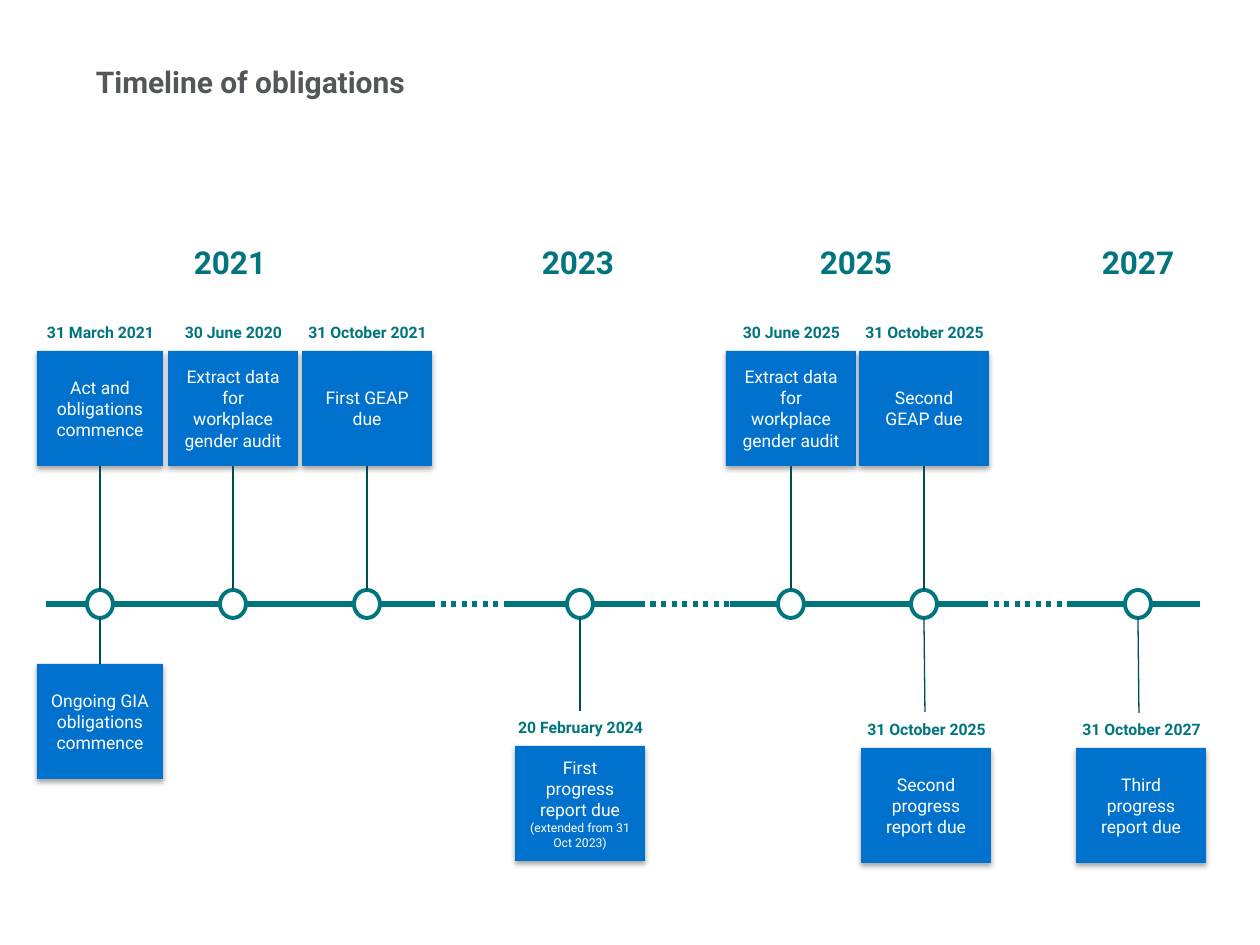
from dataclasses import dataclass

from lxml.etree import SubElement
from pptx import Presentation
from pptx.dml.color import RGBColor
from pptx.enum.dml import MSO_LINE as DASH
from pptx.enum.shapes import MSO_CONNECTOR as CONN, MSO_SHAPE as SHAPE
from pptx.enum.text import MSO_ANCHOR as ANCHOR, MSO_AUTO_SIZE as FIT, PP_ALIGN as ALIGN
from pptx.oxml.ns import qn
from pptx.util import Pt

PX = 914400 / 126  # EMU in one px


def px(n):
    return round(n * PX)


@dataclass(frozen=True)
class Theme:
    font: str = "Roboto"
    title: str = "53565A"
    teal: str = "00757D"
    stem: str = "004E53"
    box: str = "0072CE"
    white: str = "FFFFFF"
    title_pt: float = 17.1
    year_pt: int = 18
    box_pt: int = 10
    date_pt: int = 9
    note_pt: int = 7


class Timeline:
    AXIS_Y = 604
    BOX_H = 115
    DOT_W, DOT_H = 26, 28
    DOT_TOP, DOT_BOTTOM = AXIS_Y - DOT_H // 2, AXIS_Y + DOT_H // 2

    def __init__(self, slide, theme):
        self.slide, self.theme = slide, theme

    def style(self, p, size, color, bold=False, align=ALIGN.CENTER):
        p.alignment = align
        p.font.name, p.font.size, p.font.bold = self.theme.font, Pt(size), bold
        p.font.color.rgb = RGBColor.from_string(color)

    def text(self, x, y, w, h, text, size, color, align=ALIGN.CENTER):
        s = self.slide.shapes.add_textbox(px(x), px(y), px(w), px(h))
        tf = s.text_frame
        tf.word_wrap = True
        tf.text = text
        self.style(tf.paragraphs[0], size, color, True, align)
        return tf

    def title(self, text):
        tf = self.text(96, 0, 848, 100, text, self.theme.title_pt, self.theme.title, ALIGN.LEFT)
        tf.vertical_anchor = ANCHOR.BOTTOM
        tf.margin_left = tf.margin_right = tf.margin_top = tf.margin_bottom = 0

    def year(self, cx, text):
        tf = self.text(cx - 75, 237, 150, 50, text, self.theme.year_pt, self.theme.teal)
        tf.auto_size = FIT.SHAPE_TO_FIT_TEXT

    def line(self, x1, y1, x2, y2, color, width, dash=None):
        c = self.slide.shapes.add_connector(CONN.STRAIGHT, px(x1), px(y1), px(x2), px(y2))
        c.line.color.rgb = RGBColor.from_string(color)
        c.line.width = Pt(width)
        if dash:
            c.line.dash_style = dash
        SubElement(c._element.spPr, qn("a:effectLst"))
        return c

    def axis(self, x1, x2, dash=None):
        self.line(x1, self.AXIS_Y, x2, self.AXIS_Y, self.theme.teal, 3, dash)

    def stem(self, x, dot_y, end_x, end_y, box=None, side=None):
        """Line from a dot to an end point, joined to a box if there is one."""
        c = self.line(x, dot_y, end_x, end_y, self.theme.stem, 0.75)
        if box is not None:
            c.end_connect(box, side)

    def shape(self, kind, x, y, w, h, fill):
        s = self.slide.shapes.add_shape(kind, px(x), px(y), px(w), px(h))
        s.shadow.inherit = False
        s.fill.solid()
        s.fill.fore_color.rgb = RGBColor.from_string(fill)
        return s

    def dot(self, cx):
        s = self.shape(SHAPE.OVAL, cx - self.DOT_W // 2, self.DOT_TOP,
                       self.DOT_W, self.DOT_H, self.theme.white)
        s.line.color.rgb = RGBColor.from_string(self.theme.teal)
        s.line.width = Pt(2.25)

    def drop_shadow(self, s):
        effects = s._element.spPr.find(qn("a:effectLst"))
        shadow = SubElement(effects, qn("a:outerShdw"), blurRad=str(Pt(3.1)),
                            dist=str(Pt(1.8)), dir="5400000", rotWithShape="0")
        color = SubElement(shadow, qn("a:srgbClr"), val="000000")
        SubElement(color, qn("a:alpha"), val="35000")

    def box(self, x, y, w, text, date=None, note=None):
        t = self.theme
        s = self.shape(SHAPE.RECTANGLE, x, y, w, self.BOX_H, t.box)
        s.line.fill.background()
        self.drop_shadow(s)
        tf = s.text_frame
        tf.vertical_anchor = ANCHOR.MIDDLE
        tf.text = text
        self.style(tf.paragraphs[0], t.box_pt, t.white)
        if note:
            p = tf.add_paragraph()
            p.text = note
            self.style(p, t.note_pt, t.white)
        if date:
            label = self.text(x + w // 2 - 80, y - 34, 161, 31, date, t.date_pt, t.teal)
            label.auto_size = FIT.SHAPE_TO_FIT_TEXT
        return s


YEARS = [(230, "2021"), (578, "2023"), (856, "2025"), (1138, "2027")]
SOLID = [(46, 430), (508, 641), (730, 985), (1071, 1200)]
DOTTED = [(430, 514), (640, 745), (983, 1087)]
DOTS = [100, 233, 367, 580, 791, 924, 1138]

# dot, box left, box width, text, date
ABOVE_Y = 351
ABOVE = [
    (0, 37, 126, "Act and obligations commence", "31 March 2021"),
    (1, 168, 130, "Extract data for workplace gender audit", "30 June 2020"),
    (2, 302, 130, "First GEAP due", "31 October 2021"),
    (4, 726, 130, "Extract data for workplace gender audit", "30 June 2025"),
    (5, 859, 130, "Second GEAP due", "31 October 2025"),
]
# dot, box left, box top, text, date, note, stem end
BELOW = [
    (3, 515, 746, "First progress report due", "20 February 2024",
     "(extended from 31 Oct 2023)", (580, 711)),
    (5, 861, 748, "Second progress report due", "31 October 2025", None, (925, 712)),
    (6, 1076, 748, "Third progress report due", "31 October 2027", None, (1139, 713)),
]


def main():
    prs = Presentation()
    prs.slide_width, prs.slide_height = px(1260), px(945)
    tl = Timeline(prs.slides.add_slide(prs.slide_layouts[6]), Theme())

    # Title and years
    tl.title("Timeline of obligations")
    for cx, text in YEARS:
        tl.year(cx, text)

    # Axis with its dots
    for x1, x2 in SOLID:
        tl.axis(x1, x2)
    for x1, x2 in DOTTED:
        tl.axis(x1, x2, DASH.ROUND_DOT)
    for cx in DOTS:
        tl.dot(cx)

    # Obligations above the axis
    for i, x, w, text, date in ABOVE:
        box = tl.box(x, ABOVE_Y, w, text, date)
        tl.stem(DOTS[i], tl.DOT_TOP, x + w // 2, ABOVE_Y + tl.BOX_H, box, 2)

    # Obligations below the axis
    for i, x, y, text, date, note, (end_x, end_y) in BELOW:
        tl.box(x, y, 130, text, date, note)
        tl.stem(DOTS[i], tl.DOT_BOTTOM, end_x, end_y)
    ongoing = tl.box(37, 664, 126, "Ongoing GIA obligations commence")
    tl.stem(DOTS[0], tl.DOT_BOTTOM, 100, 664, ongoing, 0)

    prs.save("out.pptx")


if __name__ == "__main__":
    main()
